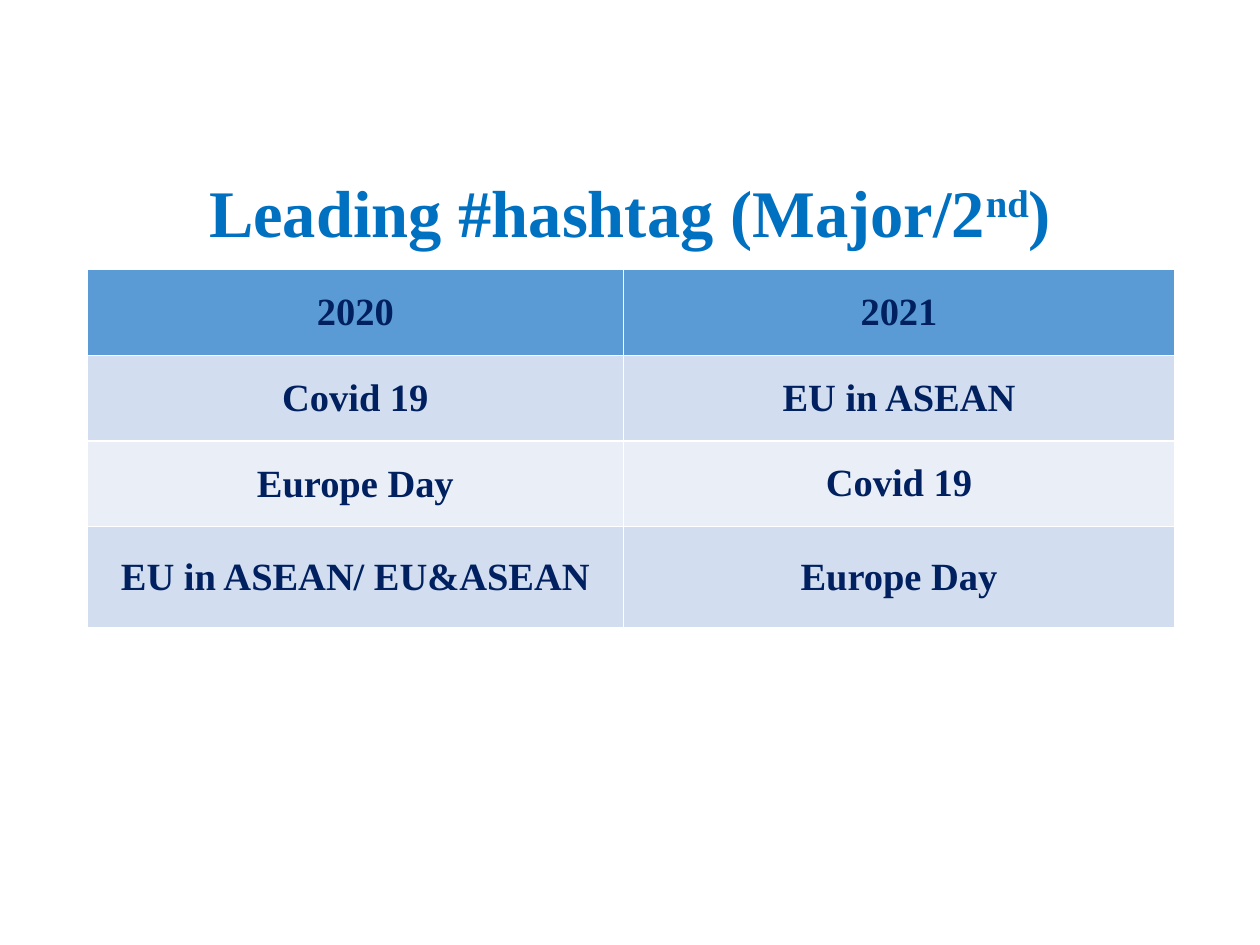
from pptx import Presentation
from pptx.dml.color import RGBColor
from pptx.enum.text import MSO_ANCHOR, PP_ALIGN
from pptx.util import Inches, Pt

MIDDLE = MSO_ANCHOR.MIDDLE
CENTER = PP_ALIGN.CENTER
FONT = "Times New Roman"
LEFT, WIDTH = 0.69, 8.62
HEADER_FILL = "5B9BD5"
BAND_FILLS = ("EAEFF7", "D2DEEF")
COLUMN_WIDTHS = (4.26, 4.37)
ROW_HEIGHTS = (0.68, 0.68, 0.68, 0.8)
HASHTAGS = (
    ("2020", "2021"),
    ("Covid 19", "EU in ASEAN"),
    ("Europe Day", "Covid 19"),
    ("EU in ASEAN/ EU&ASEAN", "Europe Day"),
)


def color(value):
    return RGBColor.from_string(value)


def style_run(r, size, value):
    r.font.name = FONT
    r.font.size = Pt(size)
    r.font.bold = True
    r.font.color.rgb = color(value)


def add_title(s):
    box = s.shapes.add_textbox(Inches(LEFT), Inches(1.32), Inches(WIDTH), Inches(0.79))
    tf = box.text_frame
    tf.word_wrap = True
    tf.vertical_anchor = MIDDLE
    p = tf.paragraphs[0]
    p.alignment = CENTER
    p.line_spacing = 0.9
    for text, baseline in (("Leading #hashtag (Major/2", 0), ("nd", 30000), (")", 0)):
        r = p.add_run()
        r.text = text
        style_run(r, 38, "0070C0")
        if baseline:
            r.font._element.set("baseline", str(baseline))


def fill_cell(cell, text, fill):
    cell.fill.solid()
    cell.fill.fore_color.rgb = color(fill)
    cell.vertical_anchor = MIDDLE
    cell.text_frame.text = text
    p = cell.text_frame.paragraphs[0]
    p.alignment = CENTER
    style_run(p.runs[0], 22, "002060")


def tighten_margins(cell):
    cell.margin_left = cell.margin_top = cell.margin_right = Inches(0.01)
    cell.margin_bottom = 0


def add_hashtag_table(s):
    frame = s.shapes.add_table(
        len(HASHTAGS), len(COLUMN_WIDTHS),
        Inches(LEFT), Inches(2.14), Inches(WIDTH), Inches(sum(ROW_HEIGHTS)),
    )
    table = frame.table
    for column, width in zip(table.columns, COLUMN_WIDTHS):
        column.width = Inches(width)
    for row, height in zip(table.rows, ROW_HEIGHTS):
        row.height = Inches(height)
    for i, texts in enumerate(HASHTAGS):
        fill = BAND_FILLS[i % 2] if i else HEADER_FILL
        for j, text in enumerate(texts):
            fill_cell(table.cell(i, j), text, fill)
        if i:
            tighten_margins(table.cell(i, 0))


def main():
    prs = Presentation()
    prs.slide_width = Inches(10)
    prs.slide_height = Inches(7.5)
    s = prs.slides.add_slide(prs.slide_layouts[6])
    add_title(s)
    add_hashtag_table(s)
    prs.save("out.pptx")


if __name__ == "__main__":
    main()
